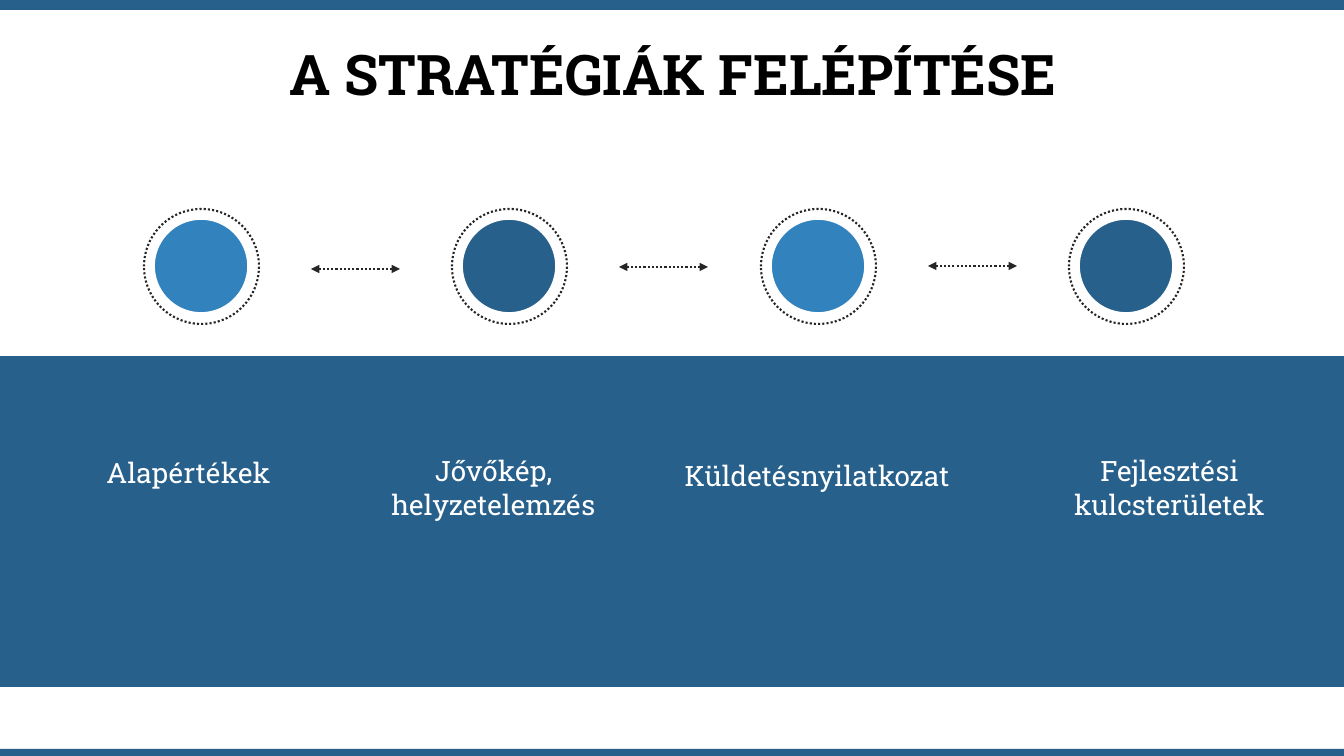
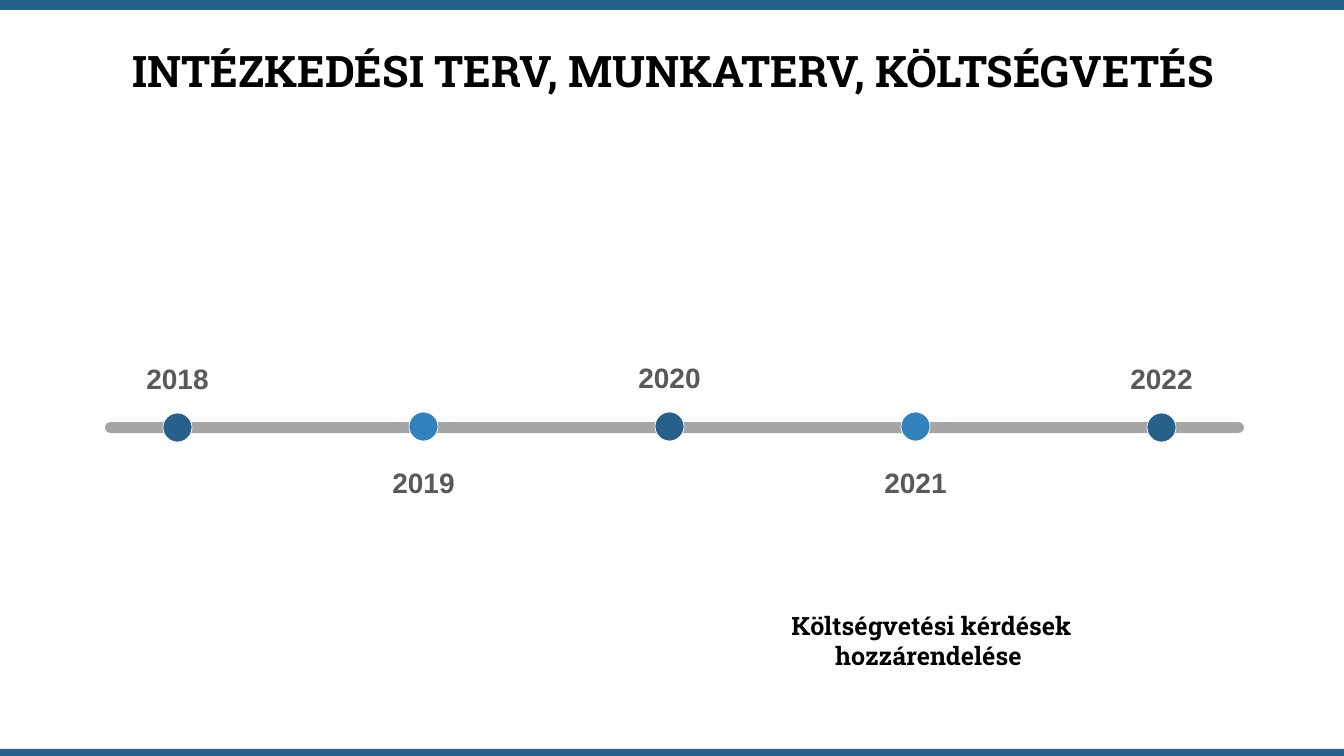
from dataclasses import dataclass

from lxml import etree
from pptx import Presentation
from pptx import util as u
from pptx.dml.color import RGBColor
from pptx.enum import dml, shapes, text
from pptx.oxml.ns import qn

EMU_PER_PX = 914400 / 100.8
WIDTH, HEIGHT = 1344, 756

# Shared palette and fonts
NAVY, BLUE, WHITE, BLACK = "28608C", "3282BE", "FFFFFF", "000000"
DARK, YEAR_GRAY, BAR_GRAY = "262626", "595959", "808080"
SLAB, SANS = "Roboto Slab", "Arial"


@dataclass(frozen=True)
class Box:
    left: int
    top: int
    width: int
    height: int

    def emu(self) -> list:
        return [px(value) for value in (self.left, self.top, self.width, self.height)]


@dataclass(frozen=True)
class Line:
    color: str
    width: float
    dotted: bool = False


@dataclass(frozen=True)
class Label:
    words: str
    box: Box


@dataclass(frozen=True)
class Milestone:
    year: str
    color: str
    dot_top: int
    label_top: int


def px(value: int) -> u.Emu:
    return u.Emu(round(value * EMU_PER_PX))


def rgb(color: str) -> RGBColor:
    return RGBColor.from_string(color)


def apply(target, values: dict) -> None:
    for name, value in values.items():
        setattr(target, name, value)


# Drawing helpers
def style_line(line_format, line: Line) -> None:
    line_format.color.rgb = rgb(line.color)
    line_format.width = u.Pt(line.width)
    if line.dotted:
        # ROUND_DOT is stored as sysDot
        line_format.dash_style = dml.MSO_LINE.ROUND_DOT


def add_shape(slide, kind, box: Box, fill: str | None = None, line: Line | None = None):
    shape = slide.shapes.add_shape(kind, *box.emu())
    shape.shadow.inherit = False
    if fill:
        shape.fill.solid()
        shape.fill.fore_color.rgb = rgb(fill)
    else:
        shape.fill.background()
    if line:
        style_line(shape.line, line)
    else:
        shape.line.fill.background()
    return shape


def add_circle(slide, center_x: int, top: int, size: int,
               fill: str | None, line: Line) -> None:
    box = Box(center_x - size // 2, top, size, size)
    add_shape(slide, shapes.MSO_SHAPE.OVAL, box, fill, line)


def add_text(slide, label: Label, font: dict, color: str,
             frame_format: dict, paragraph_format: dict | None = None) -> None:
    frame = slide.shapes.add_textbox(*label.box.emu()).text_frame
    apply(frame, {"word_wrap": True, **frame_format})
    paragraph = frame.paragraphs[0]
    apply(paragraph, {"alignment": text.PP_ALIGN.CENTER, **(paragraph_format or {})})
    run = paragraph.add_run()
    run.text = label.words
    apply(run.font, font)
    run.font.color.rgb = rgb(color)


def add_double_arrow(slide, center_x: int, y: int, length: int) -> None:
    left = center_x - length // 2
    arrow = slide.shapes.add_connector(
        shapes.MSO_CONNECTOR.STRAIGHT, px(left + length), px(y), px(left), px(y))
    style_line(arrow.line, Line(DARK, 1.5, dotted=True))
    properties = arrow.line._get_or_add_ln()
    for end in ("a:headEnd", "a:tailEnd"):
        etree.SubElement(properties, qn(end), type="triangle")
    etree.SubElement(arrow._element.spPr, qn("a:effectLst"))


def set_opacity(shape, percent: int) -> None:
    color = shape._element.spPr.find(qn("a:solidFill"))[0]
    etree.SubElement(color, qn("a:alpha"), val=str(percent * 1000))


# Frame shared by both slides
def add_slide(presentation, title: str, size: int, line_spacing: float):
    slide = presentation.slides.add_slide(presentation.slide_layouts[6])
    for band in (Box(0, 0, WIDTH, 10), Box(0, HEIGHT - 7, WIDTH, 7)):
        add_shape(slide, shapes.MSO_SHAPE.RECTANGLE, band, NAVY)
    add_text(slide, Label(title, Box(35, 37, 1276, 80)),
             {"name": SLAB, "size": u.Pt(size), "bold": True}, BLACK,
             {"vertical_anchor": text.MSO_ANCHOR.MIDDLE},
             {"line_spacing": line_spacing, "space_before": u.Pt(10)})
    return slide


GROW = {"auto_size": text.MSO_AUTO_SIZE.SHAPE_TO_FIT_TEXT}

STAGES = (
    Label("Alapértékek", Box(86, 450, 205, 44)),
    Label("Jővőkép, helyzetelemzés", Box(375, 448, 237, 78)),
    Label("Küldetésnyilatkozat", Box(629, 453, 376, 44)),
    Label("Fejlesztési kulcsterületek", Box(1040, 448, 259, 78)),
)
ARROW_HEIGHTS = (269, 267, 266)

MILESTONES = (
    Milestone("2018", NAVY, 413, 357),
    Milestone("2019", BLUE, 412, 461),
    Milestone("2020", NAVY, 412, 356),
    Milestone("2021", BLUE, 412, 461),
    Milestone("2022", NAVY, 413, 357),
)


def build_strategy(presentation) -> None:
    slide = add_slide(presentation, "A STRATÉGIÁK FELÉPÍTÉSE", 40, 0.9)

    # Panel with the stage names
    add_shape(slide, shapes.MSO_SHAPE.RECTANGLE, Box(0, 356, WIDTH, 331), NAVY)
    for stage in STAGES:
        add_text(slide, stage, {"name": SLAB, "size": u.Pt(20)}, WHITE,
                 {"vertical_anchor": text.MSO_ANCHOR.BOTTOM, **GROW})

    # Ringed discs, evenly spread, with arrows halfway between them
    first, last = 201, 1126
    centers = [round(first + (last - first) * index / 3) for index in range(4)]
    for index, center in enumerate(centers):
        add_circle(slide, center, 219, 94, (BLUE, NAVY)[index % 2], Line(WHITE, 1.25))
        add_circle(slide, center, 209, 115, None, Line(DARK, 1.5, dotted=True))
    for left, right, y in zip(centers, centers[1:], ARROW_HEIGHTS):
        add_double_arrow(slide, (left + right) // 2, y, 89)


def build_timeline(presentation) -> None:
    slide = add_slide(presentation, "INTÉZKEDÉSI TERV, MUNKATERV, KÖLTSÉGVETÉS", 31, 0.7)

    # Time axis
    bar = add_shape(slide, shapes.MSO_SHAPE.ROUNDED_RECTANGLE,
                    Box(105, 422, 1139, 11), BAR_GRAY)
    bar.adjustments[0] = 0.5
    set_opacity(bar, 70)

    # Years
    for index, milestone in enumerate(MILESTONES):
        center = 177 + 246 * index
        add_circle(slide, center, milestone.dot_top, 29, milestone.color, Line(WHITE, 0.5))
        add_text(slide, Label(milestone.year, Box(center - 69, milestone.label_top, 139, 44)),
                 {"name": SANS, "size": u.Pt(20), "bold": True}, YEAR_GRAY, GROW)

    # Budget note
    add_text(slide, Label("Költségvetési kérdések hozzárendelése ", Box(739, 605, 385, 72)),
             {"name": SLAB, "size": u.Pt(18), "bold": True}, BLACK, GROW)


def main() -> None:
    presentation = Presentation()
    apply(presentation, {"slide_width": px(WIDTH), "slide_height": px(HEIGHT)})
    build_strategy(presentation)
    build_timeline(presentation)
    presentation.save("out.pptx")


if __name__ == "__main__":
    main()
